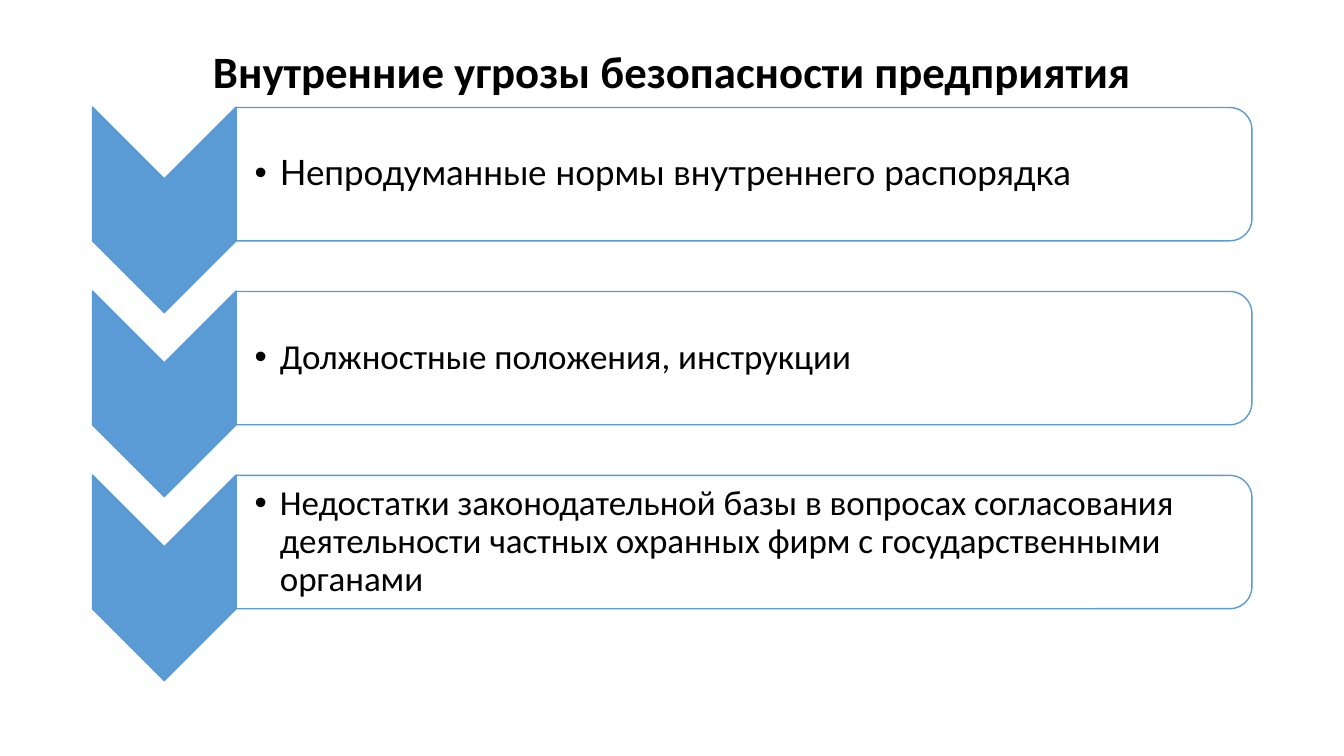
from lxml import etree
from pptx import Presentation
from pptx import util as u
from pptx.dml.color import RGBColor
from pptx.enum import shapes, text
from pptx.oxml.ns import qn

BLUE, WHITE, BLACK = "5B9BD5", "FFFFFF", "000000"
PITCH = 4.635  # step between rows, cm
ROWS = [
    ("Непродуманные нормы внутреннего распорядка", "Lato"),
    ("Должностные положения, инструкции", "Calibri"),
    ("Недостатки законодательной базы в вопросах согласования "
     "деятельности частных охранных фирм с государственными органами",
     "Calibri"),
]


def color(code):
    return RGBColor.from_string(code)


def box(where):
    return [u.Cm(n) for n in where]


def turned(slide, kind, where, fill, alpha=None):
    """Add a blue-edged shape rotated by a quarter turn."""
    shape = slide.shapes.add_shape(kind, *box(where))
    shape.rotation = 90
    shape.shadow.inherit = False
    shape.fill.solid()
    shape.fill.fore_color.rgb = color(fill)
    shape.line.color.rgb = color(BLUE)
    shape.line.width = u.Pt(1)
    if alpha is not None:
        tint = shape.fill._xPr.find(".//" + qn("a:srgbClr"))
        etree.SubElement(tint, qn("a:alpha"), val=str(alpha * 1000))


def bullet(para):
    """Give the paragraph a hanging round bullet."""
    props = para._p.get_or_add_pPr()
    props.set("marL", str(u.Cm(0.635)))
    props.set("indent", str(-u.Cm(0.635)))
    etree.SubElement(props, qn("a:buFont"), typeface="Arial")
    etree.SubElement(props, qn("a:buChar"), char="•")


def label(slide, where, words, face, size, pads, listed=False):
    frame = slide.shapes.add_textbox(*box(where)).text_frame
    frame.word_wrap = True
    frame.vertical_anchor = text.MSO_ANCHOR.MIDDLE
    (frame.margin_left, frame.margin_top,
     frame.margin_right, frame.margin_bottom) = box(pads)
    para = frame.paragraphs[0]
    para.text = words
    para.line_spacing = 0.9
    if listed:
        bullet(para)
    else:
        para.alignment = text.PP_ALIGN.CENTER
    para.font.name = face
    para.font.size = u.Pt(size)
    para.font.bold = not listed
    para.font.color.rgb = color(BLACK)


def row(slide, drop, words, face):
    kinds = shapes.MSO_SHAPE
    turned(slide, kinds.CHEVRON, (1.55, 3.48 + drop, 5.18, 3.62), BLUE)
    turned(slide, kinds.ROUND_2_SAME_RECTANGLE,
           (17.07, -8.41 + drop, 3.36, 25.6), WHITE, 90)
    label(slide, (5.94, 2.88 + drop, 25.43, 3.02), words, face, 25,
          (0.48, 0.05, 0.05, 0.05), listed=True)


def main():
    deck = Presentation()
    deck.slide_width, deck.slide_height = u.Cm(33.87), u.Cm(19.05)
    slide = deck.slides.add_slide(deck.slide_layouts[6])

    # Title
    label(slide, (2.34, 1.02, 29.21, 1.68),
          "Внутренние угрозы безопасности предприятия", "Calibri", 32,
          (0.25, 0.13, 0.25, 0.13))

    # Chevron list
    for i, (words, face) in enumerate(ROWS):
        row(slide, i * PITCH, words, face)

    deck.save("out.pptx")


if __name__ == "__main__":
    main()
